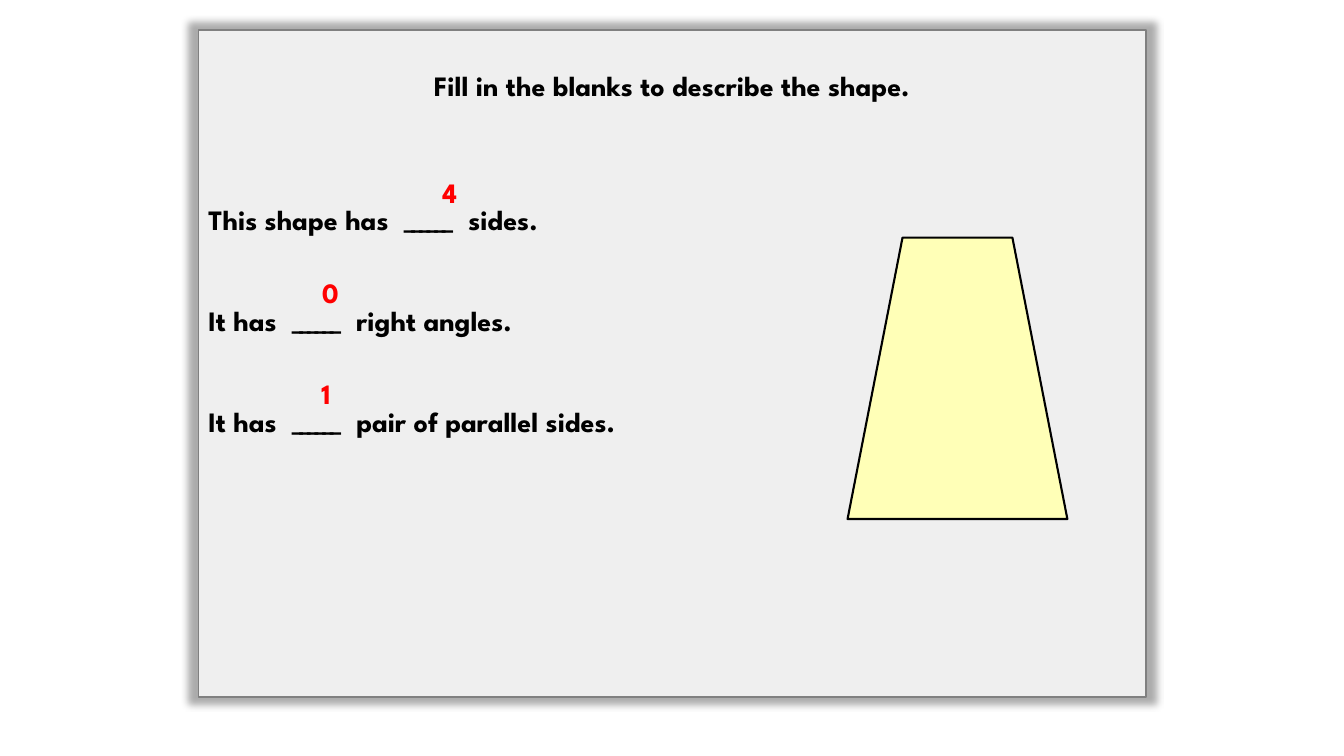
from lxml import etree
from pptx import Presentation
from pptx import util as u
from pptx.dml.color import RGBColor
from pptx.enum import shapes, text
from pptx.oxml.ns import qn

TITLE = "Fill in the blanks to describe the shape."
BLANK = "______"
# Words before the blank, words after it, answer, left of the answer in cm
SENTENCES = [
    ("This shape has  ", "  sides.", "4", 10.9),
    ("It has  ", "  right angles.", "0", 7.87),
    ("It has  ", "  pair of parallel sides.", "1", 7.85),
]
PANEL = (5.0, 0.76, 23.88, 16.81)
TRAPEZOID = (21.36, 5.99, 5.54, 7.09)
TITLE_TOP, SENTENCES_TOP, ANSWERS_TOP, SENTENCE_STEP = 1.61, 4.98, 4.29, 2.54
BLACK, RED = "000000", "FF0000"


def color(value):
    return RGBColor.from_string(value)


def place(box):
    return [u.Cm(length) for length in box]


def add_element(parent, tag, **attributes):
    return etree.SubElement(parent, qn(tag), attributes)


def set_font(paragraph, value):
    font = paragraph.font
    font.name, font.size, font.bold = "League Spartan", u.Pt(20), True
    font.color.rgb = color(value)


def add_outlined(slide, kind, box, fill, line, width):
    shape = slide.shapes.add_shape(kind, *place(box))
    shape.shadow.inherit = False
    shape.fill.solid()
    shape.fill.fore_color.rgb = color(fill)
    shape.line.color.rgb = color(line)
    shape.line.width = u.Pt(width)
    return shape


def add_text_frame(slide, box):
    frame = slide.shapes.add_textbox(*place(box)).text_frame
    frame.word_wrap = True
    return frame


def add_panel(slide):
    """Add the translucent panel with a soft shadow on all sides."""
    panel = add_outlined(slide, shapes.MSO_SHAPE.RECTANGLE, PANEL,
                         "FFFFFF", "808080", 1)
    properties = panel._element.spPr
    fill = properties.find(qn("a:solidFill")).find(qn("a:srgbClr"))
    add_element(fill, "a:alpha", val="82000")
    shadow = add_element(properties.find(qn("a:effectLst")), "a:outerShdw",
                         blurRad="63500", sx="102000", sy="102000",
                         algn="ctr", rotWithShape="0")
    shade = add_element(shadow, "a:srgbClr", val=BLACK)
    add_element(shade, "a:alpha", val="40000")
    return panel


def add_title(slide, panel):
    title = slide.shapes.title
    panel._element.addnext(title._element)
    left, _, width, _ = PANEL
    title.left, title.top, title.width, title.height = place(
        (left, TITLE_TOP, width, 1.14))
    frame = title.text_frame
    frame.text = TITLE
    frame.auto_size = text.MSO_AUTO_SIZE.NONE
    frame.vertical_anchor = text.MSO_ANCHOR.TOP
    frame.paragraphs[0].alignment = text.PP_ALIGN.CENTER
    set_font(frame.paragraphs[0], BLACK)


def add_sentences(slide):
    frame = add_text_frame(slide, (PANEL[0], SENTENCES_TOP, 15, 6.4))
    for index, (before, after, answer, left) in enumerate(SENTENCES):
        paragraph = frame.add_paragraph() if index else frame.paragraphs[0]
        if index:
            paragraph.space_before = u.Pt(48)
        for words in (before, BLANK, after):
            run = paragraph.add_run()
            run.text = words
            if words == BLANK:
                run.font._element.set("spc", "-300")
        set_font(paragraph, BLACK)

        top = ANSWERS_TOP + index * SENTENCE_STEP
        answer_frame = add_text_frame(slide, (left, top, 0.74, 1.14))
        answer_frame.text = answer
        set_font(answer_frame.paragraphs[0], RED)


def main():
    presentation = Presentation()
    presentation.slide_width = u.Cm(33.87)
    presentation.slide_height = u.Cm(19.05)
    slide = presentation.slides.add_slide(presentation.slide_layouts[5])
    add_title(slide, add_panel(slide))
    add_outlined(slide, shapes.MSO_SHAPE.TRAPEZOID, TRAPEZOID,
                 "FFFFB7", BLACK, 1.5)
    add_sentences(slide)
    presentation.save("out.pptx")


if __name__ == "__main__":
    main()
